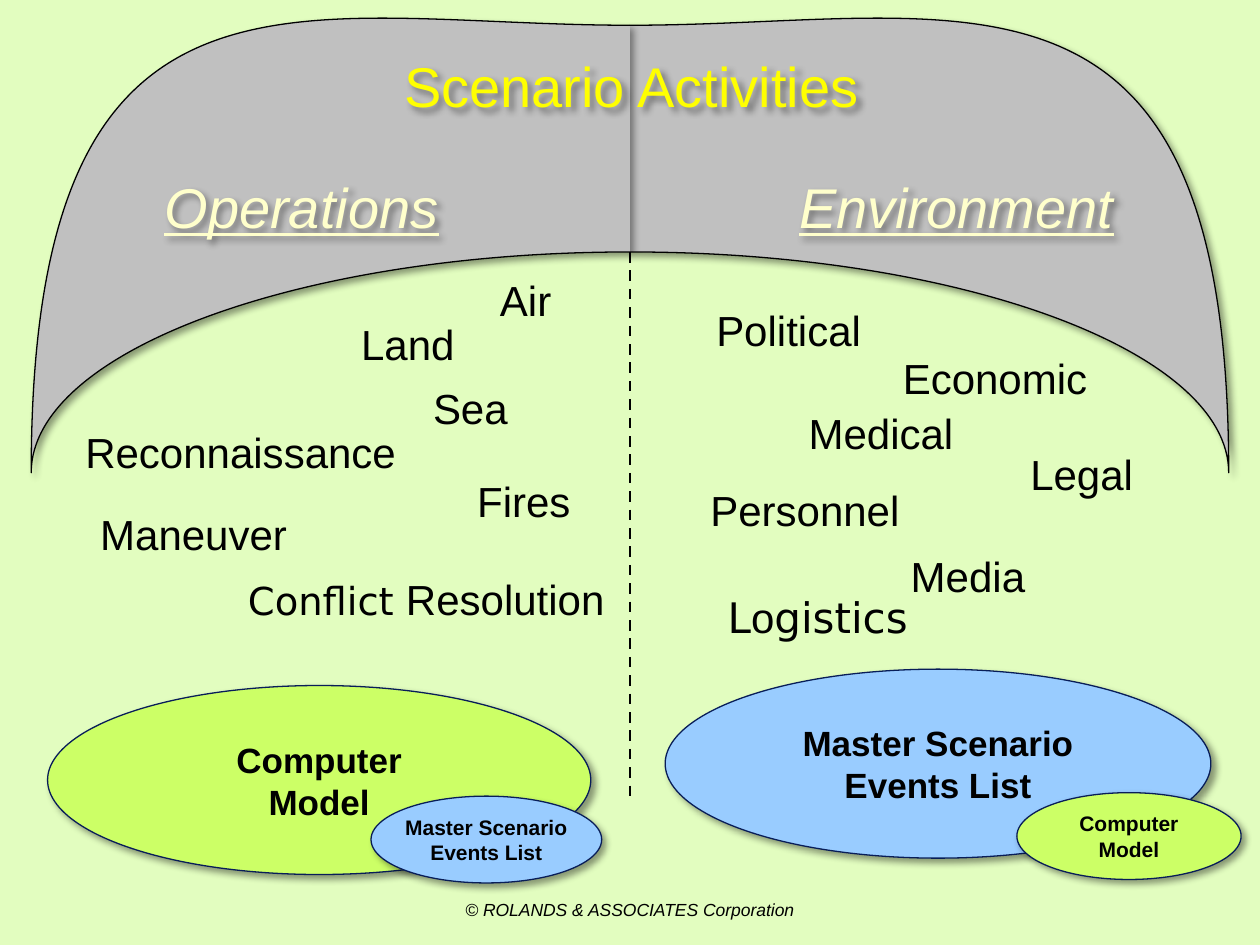
from lxml import etree
from pptx import Presentation
from pptx.dml.color import RGBColor
from pptx.enum.dml import MSO_LINE
from pptx.enum.shapes import MSO_CONNECTOR, MSO_SHAPE
from pptx.enum.text import MSO_ANCHOR, MSO_AUTO_SIZE, PP_ALIGN
from pptx.oxml import parse_xml
from pptx.oxml.ns import nsdecls, qn
from pptx.util import Cm, Pt

DASH = MSO_LINE.DASH
STRAIGHT = MSO_CONNECTOR.STRAIGHT
OVAL = MSO_SHAPE.OVAL
MIDDLE, BOTTOM = MSO_ANCHOR.MIDDLE, MSO_ANCHOR.BOTTOM
FIT_SHAPE = MSO_AUTO_SIZE.SHAPE_TO_FIT_TEXT
LEFT, CENTER = PP_ALIGN.LEFT, PP_ALIGN.CENTER

PALE_GREEN = RGBColor(0xE2, 0xFD, 0xBF)
LIME = RGBColor(0xCC, 0xFF, 0x66)
SKY = RGBColor(0x99, 0xCC, 0xFF)
NAVY = RGBColor(0x08, 0x1D, 0x58)
GRAY = RGBColor(0xC0, 0xC0, 0xC0)
YELLOW = RGBColor(0xFF, 0xFF, 0x00)
CREAM = RGBColor(0xFF, 0xFF, 0xCC)
BLACK = RGBColor(0x00, 0x00, 0x00)

SANS, ALT = "Arial", "DejaVu Sans"
WIDTH, HEIGHT = 25.4, 19.05
HALF = WIDTH / 2
PANEL_TOP = 5.08
WORD_HEIGHT = 1.27
SIDE_MARGIN = 0.22

MODEL = ("Computer\nModel", LIME)
EVENTS = ("Master Scenario\nEvents List", SKY)

OPERATIONS = {
    "heading": ("Operations", (3.02, -1.73, 6.12, 1.6)),
    "words": [
        ([("Air", SANS, 24)], 9.86, 0.33, 1.6),
        ([("Land", SANS, 24)], 7.06, 1.22, 2.46),
        ([("Sea", SANS, 24)], 8.51, 2.51, 2.08),
        ([("Reconnaissance", SANS, 24)], 1.5, 3.4, 6.88),
        ([("Fires", SANS, 24)], 9.4, 4.39, 2.46),
        ([("Maneuver", SANS, 24)], 1.8, 5.05, 4.37),
        ([("Conflict ", ALT, 22), ("Resolution", SANS, 24)], 4.78, 6.35, 7.82),
    ],
    "ovals": [
        (MODEL, 20, (0.96, 8.74, 10.95, 3.81)),
        (EVENTS, 12, (7.48, 10.97, 4.65, 1.75)),
    ],
}
ENVIRONMENT = {
    "heading": ("Environment", (3.1, -1.73, 6.96, 1.6)),
    "words": [
        ([("Political", SANS, 24)], 1.52, 0.94, 3.5),
        ([("Economic", SANS, 24)], 5.28, 1.9, 4.32),
        ([("Medical", SANS, 24)], 3.38, 3.02, 3.5),
        ([("Legal", SANS, 24)], 7.85, 3.84, 2.67),
        ([("Personnel", SANS, 24)], 1.4, 4.57, 4.42),
        ([("Media", SANS, 24)], 5.44, 5.89, 2.97),
        ([("L", ALT, 24), ("o", SANS, 24), ("gistics", ALT, 24)], 1.75, 6.71, 4.19),
    ],
    "ovals": [
        (EVENTS, 20, (0.71, 8.41, 11, 3.81)),
        (MODEL, 12, (7.8, 10.9, 4.52, 1.75)),
    ],
}


def add_shadow(sp):
    """Give a shape a soft shadow to the lower right."""
    sp.shadow.inherit = False
    effects = sp._element.spPr.find(qn("a:effectLst"))
    effects.append(parse_xml(
        f'<a:outerShdw {nsdecls("a")} blurRad="{Pt(4)}" dist="{Pt(3)}" dir="2700000">'
        '<a:srgbClr val="000000"><a:alpha val="40000"/></a:srgbClr></a:outerShdw>'))


def style_shape(sp, fill, line):
    """Set the fill, thin outline and shadow of a shape."""
    sp.fill.solid()
    sp.fill.fore_color.rgb = fill
    sp.line.color.rgb = line
    sp.line.width = Pt(0.75)
    add_shadow(sp)


def add_text(s, box, runs, color=BLACK, align=LEFT, wrap=False):
    """Add a one-paragraph text box from (text, font, size) runs."""
    sp = s.shapes.add_textbox(*map(Cm, box))
    tf = sp.text_frame
    tf.margin_left = tf.margin_right = Cm(SIDE_MARGIN)
    tf.word_wrap = wrap
    if not wrap:
        tf.auto_size = FIT_SHAPE
    p = tf.paragraphs[0]
    p.alignment = align
    for text, font, size in runs:
        r = p.add_run()
        r.text = text
        r.font.name = font
        r.font.size = Pt(size)
        r.font.color.rgb = color
    return sp


def add_oval(s, box, label, size):
    """Add an ellipse with a bold centred label."""
    text, fill = label
    sp = s.shapes.add_shape(OVAL, *map(Cm, box))
    style_shape(sp, fill, NAVY)
    tf = sp.text_frame
    tf.text = text
    tf.word_wrap = False
    tf.vertical_anchor = MIDDLE
    for p in tf.paragraphs:
        p.alignment = CENTER
        p.font.name = SANS
        p.font.size = Pt(size)
        p.font.bold = True
        p.font.color.rgb = BLACK


def add_wing(s, box, mirrored):
    """Add one half of the canopy, with its inner edge left unstroked."""
    x, y, w, h = map(Cm, box)
    builder = s.shapes.build_freeform(x, y)
    builder.add_line_segments([(x + w, y), (x + w, y + h), (x, y + h)])
    sp = builder.convert_to_shape()
    style_shape(sp, GRAY, BLACK)
    tip = box[2]
    curves = [
        [(6.67, 0), (tip, 2.01), (tip, 4.45)],
        [(tip, -6.58), (6.67, -4.57), (0, -4.57)],
    ]

    def add_point(parent, px, py):
        """Append a point given in centimetres from the inner top corner."""
        px = tip - px if mirrored else px
        etree.SubElement(parent, qn("a:pt"), x=str(Cm(px)), y=str(Cm(py)))

    paths = sp._element.spPr.find(qn("a:custGeom")).find(qn("a:pathLst"))
    paths.clear()
    for hidden in ({"fill": "none"}, {"stroke": "0"}):
        outline = etree.SubElement(paths, qn("a:path"), w=str(w), h=str(h), **hidden)
        add_point(etree.SubElement(outline, qn("a:moveTo")), 0, 0)
        for curve in curves:
            bezier = etree.SubElement(outline, qn("a:cubicBezTo"))
            for point in curve:
                add_point(bezier, *point)
        if "stroke" in hidden:
            etree.SubElement(outline, qn("a:close"))


def add_canopy(s, box):
    """Draw both wings of the canopy and the title."""
    x, y, w, h = box
    wing = 12.07
    add_wing(s, (x + w / 2, y, wing, h), False)
    add_wing(s, (x + w / 2 - wing, y, wing, h), True)
    sp = add_text(s, (x + 1.94, y - 4.01, 21.59, 1.45),
                  [("Scenario Activities", SANS, 32)], YELLOW, CENTER, True)
    sp.text_frame.paragraphs[0].line_spacing = 0.9
    add_shadow(sp)


def add_divider(s, box):
    """Draw the dashed line down the middle of the box."""
    x, y, w, h = box
    middle = Cm(x + w / 2)
    line = s.shapes.add_connector(STRAIGHT, middle, Cm(y), middle, Cm(y + h))
    line.line.color.rgb = BLACK
    line.line.width = Pt(1.5)
    line.line.dash_style = DASH
    etree.SubElement(line._element.spPr, qn("a:effectLst"))


def add_panel(s, origin, panel):
    """Place the heading, words and ellipses of one half."""
    x, y = origin

    def place(box):
        """Shift a box by the origin of the panel."""
        return (x + box[0], y + box[1], *box[2:])

    text, box = panel["heading"]
    sp = add_text(s, place(box), [(text, SANS, 32)], CREAM, CENTER)
    font = sp.text_frame.paragraphs[0].runs[0].font
    font.italic = font.underline = True
    add_shadow(sp)
    for runs, left, top, width in panel["words"]:
        add_text(s, place((left, top, width, WORD_HEIGHT)), runs)
    for label, size, box in panel["ovals"]:
        add_oval(s, place(box), label, size)


def add_footer(s, box):
    """Write the copyright line at the bottom of the box."""
    sp = add_text(s, box, [("© ROLANDS & ASSOCIATES Corporation", SANS, 10)],
                  align=CENTER, wrap=True)
    sp.text_frame.vertical_anchor = BOTTOM
    sp.text_frame.paragraphs[0].runs[0].font.italic = True


def main():
    """Build and save the slide."""
    prs = Presentation()
    prs.slide_width, prs.slide_height = Cm(WIDTH), Cm(HEIGHT)
    s = prs.slides.add_slide(prs.slide_layouts[6])
    s.background.fill.solid()
    s.background.fill.fore_color.rgb = PALE_GREEN
    add_canopy(s, (0, PANEL_TOP, WIDTH, 8.89))
    add_divider(s, (0, PANEL_TOP, WIDTH, 11.05))
    for x, panel in ((0, OPERATIONS), (HALF, ENVIRONMENT)):
        add_panel(s, (x, PANEL_TOP), panel)
    add_footer(s, (7.83, 17.35, 9.73, 1.32))
    prs.save("out.pptx")


if __name__ == "__main__":
    main()
